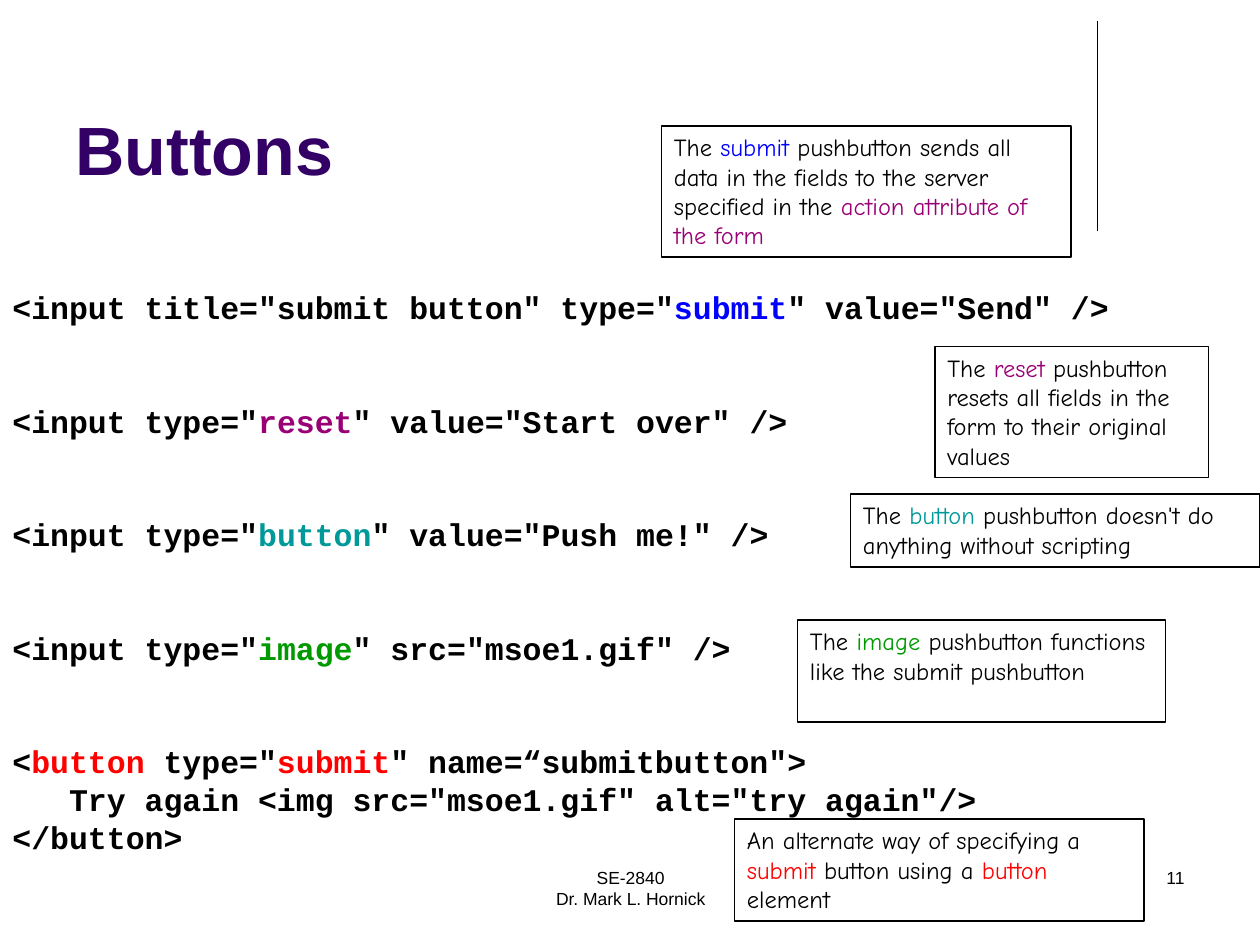
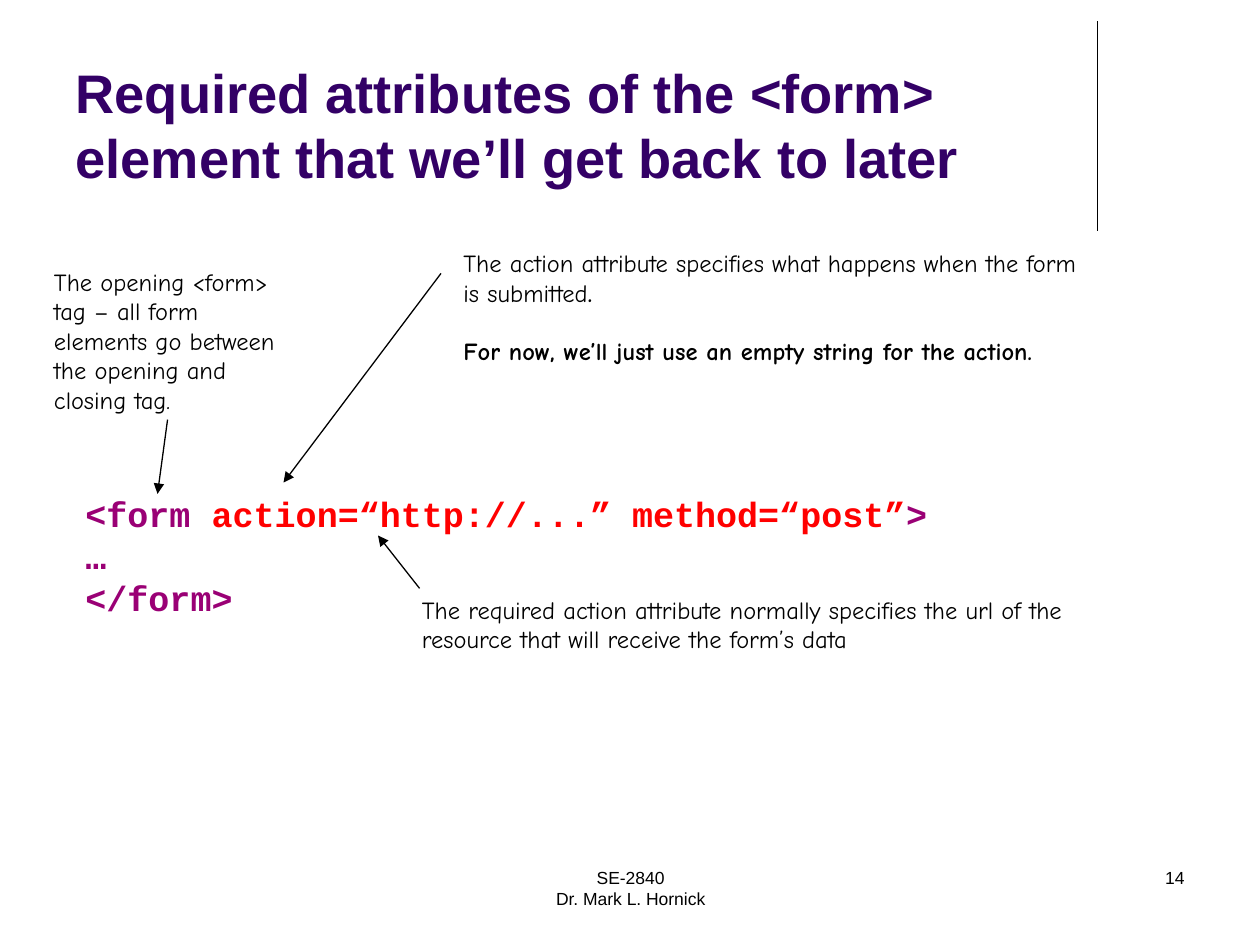
from dataclasses import dataclass

from pptx import Presentation
from pptx import util as u
from pptx.dml.color import RGBColor
from pptx.enum import shapes, text
from pptx.oxml.ns import qn
from lxml import etree


@dataclass(frozen=True)
class Theme:
    ink: str = "000000"
    paper: str = "FFFFFF"
    heading: str = "330066"
    blue: str = "0000FF"
    plum: str = "9A0075"
    teal: str = "009999"
    green: str = "009900"
    red: str = "FF0000"
    sans: str = "Arial"
    note_font: str = "Comic Neue"
    code_font: str = "Courier New"
    footer_size: float = 10
    note_size: float = 14
    code_size: float = 18
    form_code_size: float = 20
    line_pitch: float = 1.2
    rule_width: float = 0.75


T = Theme()
TITLE_BOX = (0.5, 0.13, 8.25, 1.42)


def inches(*lengths):
    return [u.Inches(length) for length in lengths]


def write(frame, paragraphs, font, size, bold=False, color=T.ink,
          align=text.PP_ALIGN.LEFT, anchor=text.MSO_ANCHOR.TOP, gaps=None):
    frame.word_wrap = True
    frame.auto_size = text.MSO_AUTO_SIZE.NONE
    frame.vertical_anchor = anchor
    pitch = size * T.line_pitch
    for index, pieces in enumerate(paragraphs):
        paragraph = frame.paragraphs[0] if index == 0 else frame.add_paragraph()
        paragraph.alignment = align
        paragraph.line_spacing = u.Pt(pitch)
        paragraph.space_before = u.Pt((gaps or {}).get(index, 0) * pitch)
        for piece in pieces:
            words, tint, *weight = (piece, color) if isinstance(piece, str) else piece
            run = paragraph.add_run()
            run.text = words
            run.font.name = font
            run.font.size = u.Pt(size)
            run.font.bold = weight[0] if weight else bold
            run.font.color.rgb = RGBColor.from_string(tint)


def text_area(slide, box, paragraphs, font, size, **style):
    area = slide.shapes.add_textbox(*inches(*box))
    write(area.text_frame, paragraphs, font, size, **style)


def rule(slide, start, end, arrow=False):
    line = slide.shapes.add_connector(
        shapes.MSO_CONNECTOR.STRAIGHT, *inches(*start, *end))
    line.line.color.rgb = RGBColor.from_string(T.ink)
    line.line.width = u.Pt(T.rule_width)
    if arrow:
        etree.SubElement(line.line._get_or_add_ln(), qn("a:tailEnd"), type="triangle")
    etree.SubElement(line._element.spPr, qn("a:effectLst"))


def framed_note(slide, box, pieces):
    note = slide.shapes.add_shape(shapes.MSO_SHAPE.RECTANGLE, *inches(*box))
    note.shadow.inherit = False
    note.fill.background()
    note.line.color.rgb = RGBColor.from_string(T.ink)
    note.line.width = u.Pt(T.rule_width)
    write(note.text_frame, [pieces], T.note_font, T.note_size)


def titled_slide(deck, heading, heading_size, number):
    slide = deck.slides.add_slide(deck.slide_layouts[5])
    slide.background.fill.solid()
    slide.background.fill.fore_color.rgb = RGBColor.from_string(T.paper)
    title = slide.shapes.title
    title.left, title.top, title.width, title.height = inches(*TITLE_BOX)
    write(title.text_frame, [[heading]], T.sans, heading_size, bold=True,
          color=T.heading, anchor=text.MSO_ANCHOR.BOTTOM)
    rule(slide, (8.71, 0.17), (8.71, 1.83))
    text_area(slide, (3.42, 6.83, 3.17, 0.5), [["SE-2840"], ["Dr. Mark L. Hornick"]],
              T.sans, T.footer_size, align=text.PP_ALIGN.CENTER)
    text_area(slide, (7.17, 6.83, 2.33, 0.5), [[str(number)]],
              T.sans, T.footer_size, align=text.PP_ALIGN.RIGHT)
    return slide


def buttons_slide(deck):
    slide = titled_slide(deck, "Buttons", 39, 11)
    tags = [
        ['<input title="submit button" type="', ("submit", T.blue), '" value="Send" />'],
        ['<input type="', ("reset", T.plum), '" value="Start over" />'],
        ['<input type="', ("button", T.teal), '" value="Push me!" />'],
        ['<input type="', ("image", T.green), '" src="msoe1.gif" />'],
        ["<", ("button", T.red), ' type="', ("submit", T.red), '" name=“submitbutton">'],
        ['   Try again <img src="msoe1.gif" alt="try again"/>'],
        ["</button>"],
    ]
    text_area(slide, (0, 2.24, 10, 4.82), tags, T.code_font, T.code_size,
              bold=True, gaps={index: 2 for index in range(1, 5)})
    notes = [
        ((6.33, 4.92, 2.92, 0.81),
         ["The ", ("image", T.green), " pushbutton functions like the submit pushbutton"]),
        ((7.42, 2.75, 2.17, 1.04),
         ["The ", ("reset", T.plum),
          " pushbutton resets all fields in the form to their original values"]),
        ((5.25, 1, 3.25, 1.04),
         ["The ", ("submit", T.blue),
          " pushbutton sends all data in the fields to the server specified in the ",
          ("action attribute of the form", T.plum)]),
        ((6.75, 3.92, 3.25, 0.58),
         ["The ", ("button", T.teal), " pushbutton doesn't do anything without scripting"]),
        ((5.83, 6.5, 3.25, 0.81),
         ["An alternate way of specifying a ", ("submit", T.red),
          " button using a ", ("button", T.red), " element"]),
    ]
    for box, pieces in notes:
        framed_note(slide, box, pieces)


def form_slide(deck):
    slide = titled_slide(
        deck, "Required attributes of the <form> element that we’ll get back to later",
        31, 14)
    form_code = [
        ["<form ", ("action=“http://...” method=“post”", T.red), ">"],
        ["…"],
        ["</form>"],
    ]
    text_area(slide, (0.58, 3.86, 8.83, 1.4), form_code, T.code_font,
              T.form_code_size, bold=True, color=T.plum)
    notes = [
        ((0.33, 2.07, 2.08, 1.26),
         [["The opening <form> tag – all form elements go between the opening "
           "and closing tag."]]),
        ((3.25, 4.67, 5.83, 0.57),
         [["The required action attribute normally specifies the url of the "
           "resource that will receive the form’s data"]]),
        ((3.58, 1.92, 5.17, 1.28),
         [["The action attribute specifies what happens when the form is submitted",
           (".", T.ink, True)],
          [("For now, we’ll just use an empty string for the action.", T.ink, True)]]),
    ]
    for box, paragraphs in notes:
        text_area(slide, box, paragraphs, T.note_font, T.note_size, gaps={1: 1})
    pointers = [
        ((1.33, 3.33), (1.25, 3.92)),
        ((3.33, 4.67), (3, 4.25)),
        ((3.5, 2.17), (2.25, 3.83)),
    ]
    for start, end in pointers:
        rule(slide, start, end, arrow=True)


def main():
    deck = Presentation()
    deck.slide_width, deck.slide_height = inches(10, 7.5)
    buttons_slide(deck)
    form_slide(deck)
    deck.save("out.pptx")


if __name__ == "__main__":
    main()
